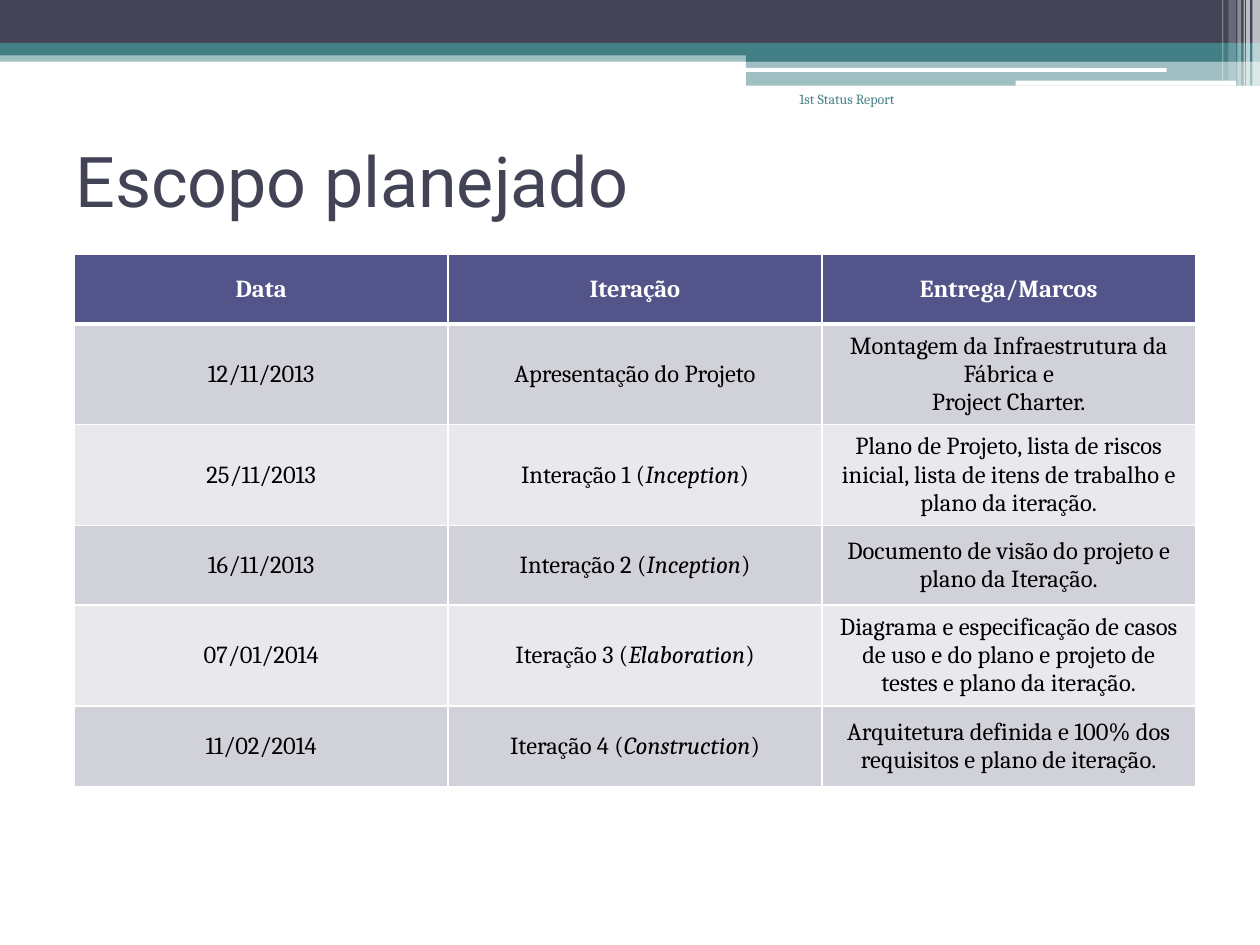
"""Build the planned scope slide: banded header, title and milestone table."""
import lxml.etree
import pptx
import pptx.dml.color
import pptx.enum.shapes
import pptx.enum.text
import pptx.oxml.ns
import pptx.util

THEME = {
    "dark": "424456", "teal": "438086", "white": "FFFFFF", "black": "000000",
    "head": "53548A", "bands": ("D1D1DA", "E9E9ED"),
    "serif": "Cambria", "sans": "Roboto",
    "title": 40, "body": 14, "note": 8, "thin": 1, "thick": 3,
}
TITLE = "Escopo planejado"
NOTE = "1st Status Report"
ROWS = [
    ("Data", "Iteração", "Entrega/Marcos"),
    ("12/11/2013", "Apresentação do Projeto",
     "Montagem da Infraestrutura da Fábrica e\nProject Charter."),
    ("25/11/2013", "Interação 1 (*Inception*)",
     "Plano de Projeto, lista de riscos inicial, lista de itens de trabalho e plano da iteração."),
    ("16/11/2013", "Interação 2 (*Inception*)",
     "Documento de visão do projeto e plano da Iteração."),
    ("07/01/2014", "Iteração 3 (*Elaboration*)",
     "Diagrama e especificação de casos de uso e do plano e projeto de testes e plano da iteração."),
    ("11/02/2014", "Iteração 4 (*Construction*)",
     "Arquitetura definida e 100% dos requisitos e plano de iteração."),
]
COLS, LINES = 100, 75
BARS = [
    ((0, 4, 100, 0.9), "teal", 50),
    ((0, 0, 100, 3.4), "dark", 100),
    ((0, 3.4, 100, 1), "teal", 100),
    ((59.2, 3.9, 40.8, 1), "teal", 100),
    ((59.2, 4.8, 40.8, 2), "teal", 50),
]
PILLS = [(59.1, 5.4, 33.5, 0.3), (80.6, 6.4, 17.5, 0.4)]
STRIPES = [
    (99.4, 0.6, 6.8, 65), (98.9, 0.3, 6.8, 65), (98.7, 0.1, 6.8, 60),
    (98.2, 0.3, 6.8, 40), (97.5, 0.6, 6.4, 20), (97, 0.1, 6.4, 30),
]
GRID = (5.9, 20.2, 89, 39.5)
HEIGHTS = (5.5, 7.9, 7.1, 6.3, 6.3, 6.4)
KIND = pptx.enum.shapes.MSO_SHAPE
ALIGN = pptx.enum.text.PP_ALIGN
ANCHOR = pptx.enum.text.MSO_ANCHOR

deck = pptx.Presentation()
deck.slide_width = pptx.util.Inches(10)
deck.slide_height = pptx.util.Inches(7.5)
slide = deck.slides.add_slide(deck.slide_layouts[6])


def place(box):
    """Turn grid units into slide lengths."""
    wide, high = deck.slide_width / COLS, deck.slide_height / LINES
    return [round(n * unit) for n, unit in zip(box, (wide, high) * 2)]


def paint(fill, tone):
    """Give a solid fill."""
    fill.solid()
    fill.fore_color.rgb = pptx.dml.color.RGBColor.from_string(tone)


def add(parent, tag, **attrs):
    """Append one drawing element."""
    return lxml.etree.SubElement(parent, pptx.oxml.ns.qn(tag), **attrs)


def draw(box, tone, alpha=100, kind=KIND.RECTANGLE):
    """Draw one plain bar."""
    bar = slide.shapes.add_shape(kind, *place(box))
    bar.shadow.inherit = False
    bar.line.fill.background()
    paint(bar.fill, THEME[tone])
    if alpha < 100:
        color = bar.element.spPr.find(".//" + pptx.oxml.ns.qn("a:srgbClr"))
        add(color, "a:alpha", val=str(alpha * 1000))


def write(frame, text, size="body", font="serif", tone="black",
          align=ALIGN.CENTER, bold=False):
    """Write text, with lines split into paragraphs and starred parts in italics."""
    frame.word_wrap = True
    for row, line in enumerate(text.split("\n")):
        para = frame.add_paragraph() if row else frame.paragraphs[0]
        para.alignment = align
        for part, words in enumerate(line.split("*")):
            run = para.add_run()
            run.text = words
            run.font.size = pptx.util.Pt(THEME[size])
            run.font.name = THEME[font]
            run.font.bold = bold
            run.font.italic = part % 2 == 1
            run.font.color.rgb = pptx.dml.color.RGBColor.from_string(THEME[tone])


def label(box, text, anchor, **style):
    """Place a text box."""
    frame = slide.shapes.add_textbox(*place(box)).text_frame
    frame.vertical_anchor = anchor
    write(frame, text, **style)


def edge(cell, row):
    """Draw white cell borders, thick beneath the header."""
    props = cell._tc.get_or_add_tcPr()
    thick = {0: "B", 1: "T"}.get(row)
    for side in "LRTB":
        width = THEME["thick" if side == thick else "thin"]
        line = add(props, "a:ln" + side, w=str(pptx.util.Pt(width)))
        add(add(line, "a:solidFill"), "a:srgbClr", val=THEME["white"])


def chart_rows():
    """Build the milestone table."""
    table = slide.shapes.add_table(len(ROWS), len(ROWS[0]), *place(GRID)).table
    for row, (high, texts) in enumerate(zip(HEIGHTS, ROWS)):
        table.rows[row].height = place((0, high))[1]
        head = row == 0
        for col, text in enumerate(texts):
            cell = table.cell(row, col)
            edge(cell, row)
            paint(cell.fill, THEME["head"] if head else THEME["bands"][(row - 1) % 2])
            cell.vertical_anchor = ANCHOR.MIDDLE
            write(cell.text_frame, text, tone="white" if head else "black", bold=head)


for box, tone, alpha in BARS:
    draw(box, tone, alpha)
for box in PILLS:
    draw(box, "white", kind=KIND.ROUNDED_RECTANGLE)
for left, wide, high, alpha in STRIPES:
    draw((left, 0, wide, high), "white", alpha)
label((5, 8.4, 90, 11.7), TITLE, ANCHOR.MIDDLE,
      size="title", font="sans", tone="dark", align=ALIGN.JUSTIFY)
label((57.5, 6.7, 14.5, 5), NOTE, ANCHOR.TOP,
      size="note", tone="teal", align=ALIGN.RIGHT)
chart_rows()
deck.save("out.pptx")
